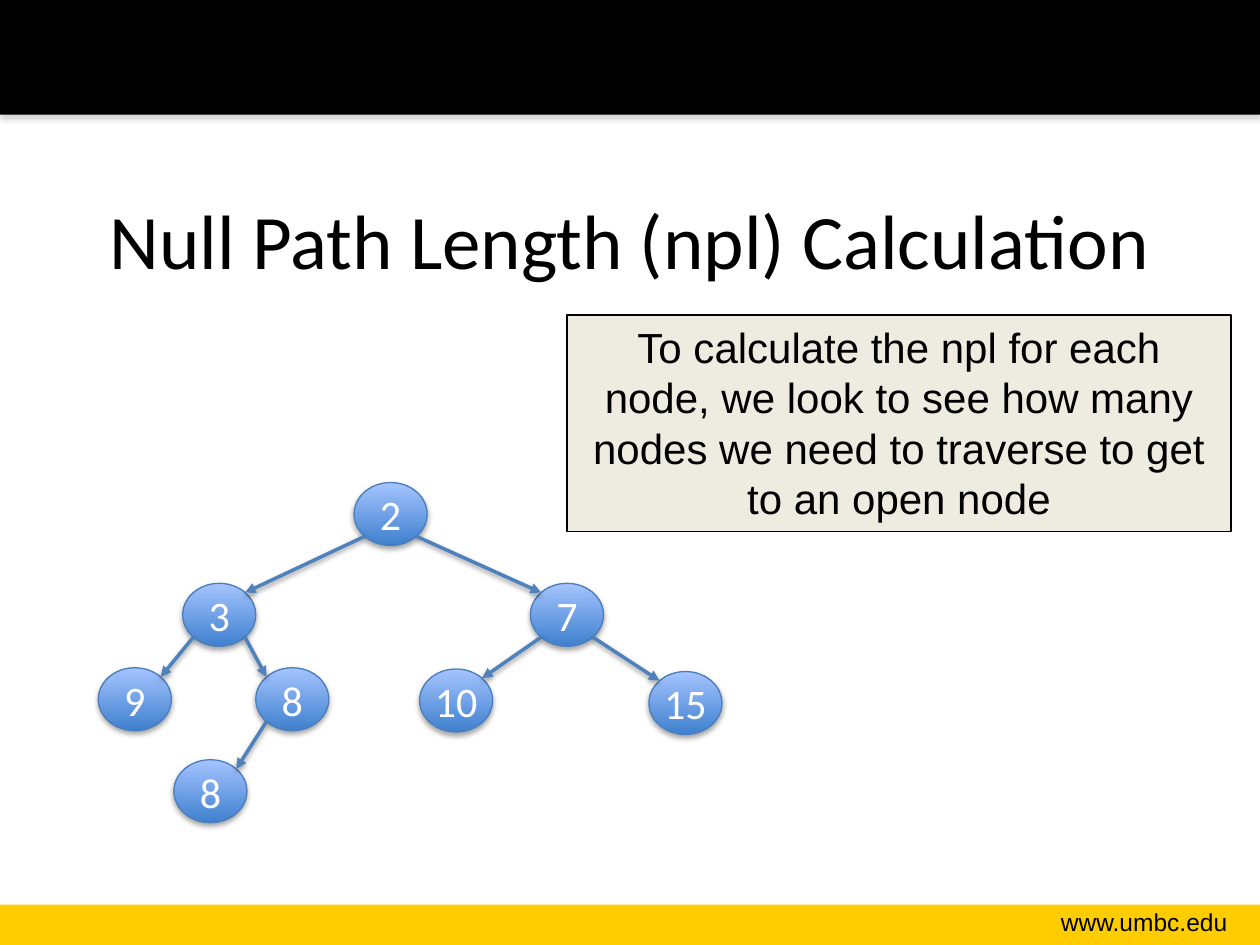
from math import sqrt

from pptx import Presentation
from pptx.dml.color import RGBColor
from pptx.enum.shapes import MSO_CONNECTOR, MSO_SHAPE
from pptx.enum.text import MSO_ANCHOR as ANCHOR, PP_ALIGN as ALIGN
from pptx.oxml import parse_xml
from pptx.oxml.ns import nsdecls
from pptx.util import Inches, Pt

COLORS = {
    "black": "000000", "gold": "FFCC00", "gray": "808080", "white": "FFFFFF",
    "beige": "EEECE1", "node_dark": "3F80CE", "node_light": "A4C4FF",
    "node_line": "4B7EBC", "arrow": "4F81BD",
}
NODE_WIDTH, NODE_HEIGHT = 0.58, 0.5

# Node name: (label, left, top)
NODES = {
    "root": ("2", 2.81, 3.83),
    "left": ("3", 1.45, 4.63),
    "right": ("7", 4.21, 4.63),
    "left_left": ("9", 0.78, 5.3),
    "left_right": ("8", 2.03, 5.3),
    "right_left": ("10", 3.33, 5.31),
    "right_right": ("15", 5.15, 5.33),
    "leaf": ("8", 1.38, 6.03),
}
# Parent, child, and the side of the child where the arrow lands
EDGES = [
    ("root", "left", "right"), ("root", "right", "left"),
    ("left", "left_left", "right"), ("left", "left_right", "left"),
    ("right", "right_left", "right"), ("right", "right_right", "left"),
    ("left_right", "leaf", "right"),
]


def rgb(name):
    return RGBColor.from_string(COLORS[name])


def add_shadow(shape, color="black", alpha=35, distance=1.8):
    """Drop a soft shadow straight below a shape or connector."""
    shape._element.spPr.append(parse_xml(
        f'<a:effectLst {nsdecls("a")}>'
        f'<a:outerShdw blurRad="{Pt(3.1)}" dist="{Pt(distance)}" dir="5400000" rotWithShape="0">'
        f'<a:srgbClr val="{COLORS[color]}"><a:alpha val="{alpha * 1000}"/></a:srgbClr>'
        '</a:outerShdw></a:effectLst>'))


def write_text(shape, text, size, font_name="Arial", color="black",
               align=ALIGN.CENTER, **frame_format):
    frame = shape.text_frame
    for name, value in {"word_wrap": True, **frame_format}.items():
        setattr(frame, name, value)
    paragraph = frame.paragraphs[0]
    paragraph.text = text
    paragraph.alignment = align
    for name, value in {"size": Pt(size), "name": font_name}.items():
        setattr(paragraph.font, name, value)
    paragraph.font.color.rgb = rgb(color)


def add_box(slide, box, fill, line=None):
    shape = slide.shapes.add_shape(MSO_SHAPE.RECTANGLE, *map(Inches, box))
    shape.fill.solid()
    shape.fill.fore_color.rgb = rgb(fill)
    if line:
        shape.line.color.rgb = rgb(line)
        shape.line.width = Pt(0.75)
    else:
        shape.line.fill.background()
    return shape


def add_header(slide, box):
    add_shadow(add_box(slide, box, "black"), "gray")


def add_footer(slide, box):
    left, top, width, height = box
    add_box(slide, box, "gold").shadow.inherit = False
    address = slide.shapes.add_textbox(
        Inches(left + width - 2.15), Inches(top - 0.03), Inches(1.99), Inches(0.34))
    write_text(address, "www.umbc.edu", 14, align=ALIGN.RIGHT)


def set_title(slide, box):
    title = slide.shapes.title
    for name, value in zip(("left", "top", "width", "height"), box):
        setattr(title, name, Inches(value))
    write_text(title, "Null Path Length (npl) Calculation", 44, "Calibri",
               vertical_anchor=ANCHOR.MIDDLE)


def add_explanation(slide, box):
    shape = add_box(slide, box, "beige", "black")
    shape.shadow.inherit = False
    write_text(shape, "To calculate the npl for each node, we look to see how many "
               "nodes we need to traverse to get to an open node", 24,
               vertical_anchor=ANCHOR.TOP)


def add_node(slide, label, left, top):
    node = slide.shapes.add_shape(
        MSO_SHAPE.OVAL, Inches(left), Inches(top), Inches(NODE_WIDTH), Inches(NODE_HEIGHT))
    node.fill.gradient()
    node.fill.gradient_angle = 90
    for stop, color in zip(node.fill.gradient_stops, ("node_dark", "node_light")):
        stop.color.rgb = rgb(color)
    node.line.color.rgb = rgb("node_line")
    node.line.width = Pt(0.75)
    add_shadow(node)
    write_text(node, label, 24, "Calibri", "white",
               word_wrap=False, vertical_anchor=ANCHOR.MIDDLE)


def diagonal_point(node, horizontal, vertical):
    """Point on a node's outline at 45 degrees; each direction is -1 or 1."""
    _, left, top = NODES[node]
    return (Inches(left + NODE_WIDTH / 2 * (1 + horizontal / sqrt(2))),
            Inches(top + NODE_HEIGHT / 2 * (1 + vertical / sqrt(2))))


def add_edge(slide, parent, child, child_side):
    side = 1 if child_side == "right" else -1
    arrow = slide.shapes.add_connector(
        MSO_CONNECTOR.STRAIGHT,
        *diagonal_point(parent, -side, 1), *diagonal_point(child, side, -1))
    arrow.line.color.rgb = rgb("arrow")
    arrow.line.width = Pt(2)
    arrow.line._get_or_add_ln().append(
        parse_xml(f'<a:tailEnd {nsdecls("a")} type="triangle"/>'))
    add_shadow(arrow, alpha=38, distance=1.6)


def add_tree(slide):
    for node in NODES.values():
        add_node(slide, *node)
    for edge in EDGES:
        add_edge(slide, *edge)


def main():
    presentation = Presentation()
    presentation.slide_width, presentation.slide_height = Inches(10), Inches(7.5)
    slide = presentation.slides.add_slide(presentation.slide_layouts[5])
    add_footer(slide, (0, 7.18, 10, 0.32))
    add_header(slide, (0, 0, 10, 0.91))
    set_title(slide, (0.5, 1.27, 9, 1.25))
    add_tree(slide)
    add_explanation(slide, (4.5, 2.5, 5.27, 1.72))
    presentation.save("out.pptx")


if __name__ == "__main__":
    main()
